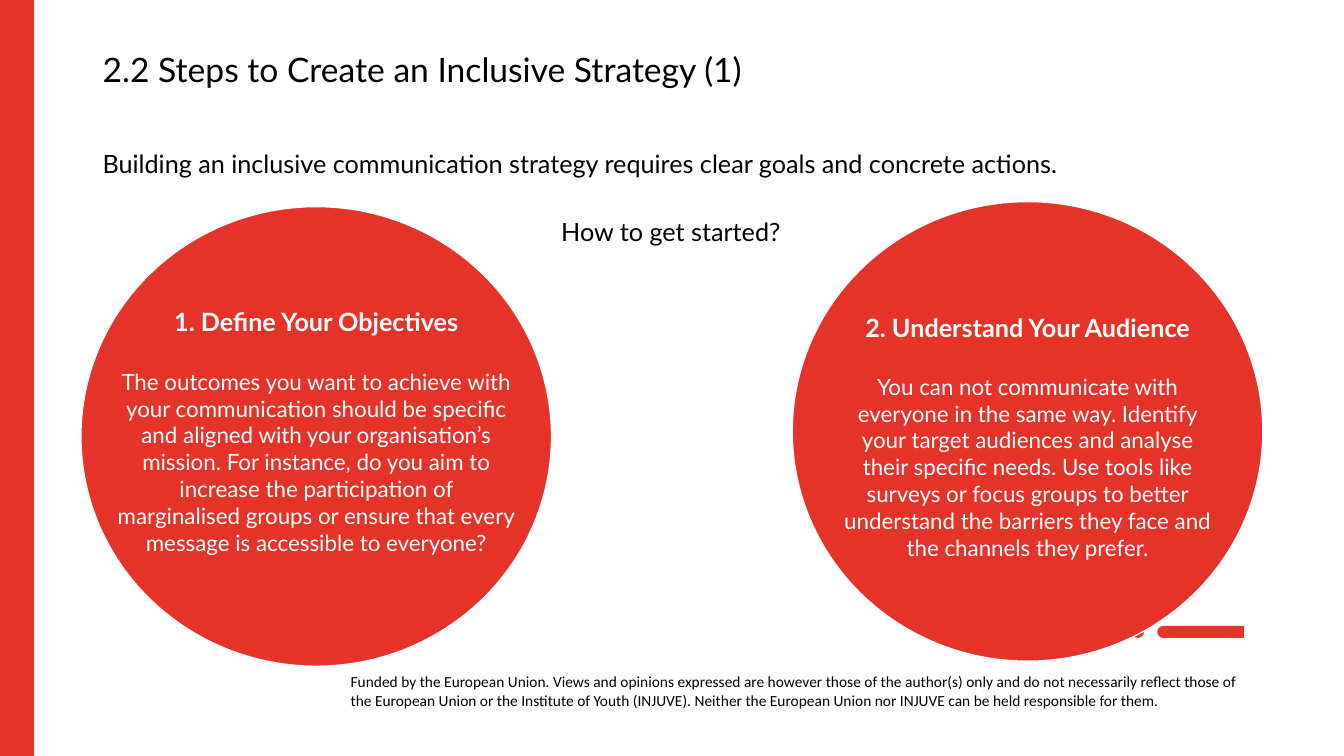
"""Build the slide on the first two steps of an inclusive strategy."""
from pptx import Presentation
from pptx.dml.color import RGBColor
from pptx.enum.shapes import MSO_SHAPE
from pptx.enum.text import MSO_ANCHOR, MSO_AUTO_SIZE, PP_ALIGN
from pptx.util import Pt

RED = "E6342A"
CIRCLE_RED = "E6332A"
WHITE = "FFFFFF"

deck = Presentation()
deck.slide_width, deck.slide_height = Pt(960), Pt(540)
page = deck.slides.add_slide(deck.slide_layouts[5])


def add_shape(kind, left, top, width, height, fill, line=None):
    shape = page.shapes.add_shape(kind, Pt(left), Pt(top), Pt(width), Pt(height))
    shape.shadow.inherit = False
    shape.fill.solid()
    shape.fill.fore_color.rgb = RGBColor.from_string(fill)
    if line:
        shape.line.color.rgb = RGBColor.from_string(line)
        shape.line.width = Pt(1)
    else:
        shape.line.fill.background()


def write(box, text, size=18, font="Lato", color="000000", bold=False,
          align=PP_ALIGN.LEFT, before=0, new=False):
    frame = box.text_frame
    frame.word_wrap = True
    frame.auto_size = MSO_AUTO_SIZE.NONE
    para = frame.add_paragraph() if new else frame.paragraphs[0]
    para.alignment = align
    para.space_before = Pt(before)
    span = para.add_run()
    span.text = text
    span.font.size = Pt(size)
    span.font.name = font
    span.font.bold = bold
    span.font.color.rgb = RGBColor.from_string(color)


add_shape(MSO_SHAPE.RECTANGLE, 0, 0, 24.5, 540, RED)
add_shape(MSO_SHAPE.RECTANGLE, 831.6, 447.1, 56.9, 8.6, RED)
for dot_left in (808.6, 826.6):
    add_shape(MSO_SHAPE.OVAL, dot_left, 447.1, 8.6, 8.6, RED)

title = page.shapes.title
title.left, title.top, title.width, title.height = Pt(66.2), Pt(31), Pt(613.4), Pt(51.1)
title.text_frame.vertical_anchor = MSO_ANCHOR.TOP
write(title, "2.2 Steps to Create an Inclusive Strategy (1)", size=24)

notes = [
    (66.2, 102.2, 746, 28.8, 18, "Lato",
     "Building an inclusive communication strategy requires clear goals and concrete actions."),
    (393.8, 151.2, 171.4, 28.8, 18, "Lato", "How to get started?"),
    (243.4, 476.6, 650.2, 33.8, 11, "Calibri",
     "Funded by the European Union. Views and opinions expressed are however those of the "
     "author(s) only and do not necessarily reflect those of the European Union or the "
     "Institute of Youth (INJUVE). Neither the European Union nor INJUVE can be held "
     "responsible for them."),
]
for left, top, width, height, size, font, text in notes:
    box = page.shapes.add_textbox(Pt(left), Pt(top), Pt(width), Pt(height))
    write(box, text, size=size, font=font)

CIRCLE_WIDTH, CIRCLE_HEIGHT, STEP_HEIGHT = 336.2, 328.3, 231.8
steps = [
    (57.8, 147.6, 287.3, 192.2, "1. Define Your Objectives",
     "The outcomes you want to achieve with your communication should be specific and aligned "
     "with your organisation’s mission. For instance, do you aim to increase the participation "
     "of marginalised groups or ensure that every message is accessible to everyone?"),
    (565.9, 144, 267.1, 195.8, "2. Understand Your Audience",
     "You can not communicate with everyone in the same way. Identify your target audiences "
     "and analyse their specific needs. Use tools like surveys or focus groups to better "
     "understand the barriers they face and the channels they prefer."),
]
for left, top, text_width, text_top, heading, body in steps:
    add_shape(MSO_SHAPE.OVAL, left, top, CIRCLE_WIDTH, CIRCLE_HEIGHT, CIRCLE_RED, line=WHITE)
    text_left = left + (CIRCLE_WIDTH - text_width) / 2
    box = page.shapes.add_textbox(Pt(text_left), Pt(text_top), Pt(text_width), Pt(STEP_HEIGHT))
    frame = box.text_frame
    frame.margin_left = frame.margin_right = frame.margin_top = frame.margin_bottom = Pt(1.4)
    frame.vertical_anchor = MSO_ANCHOR.MIDDLE
    write(box, heading, color=WHITE, bold=True, align=PP_ALIGN.CENTER)
    write(box, body, size=16, color=WHITE, align=PP_ALIGN.CENTER, before=22, new=True)

deck.save("out.pptx")
